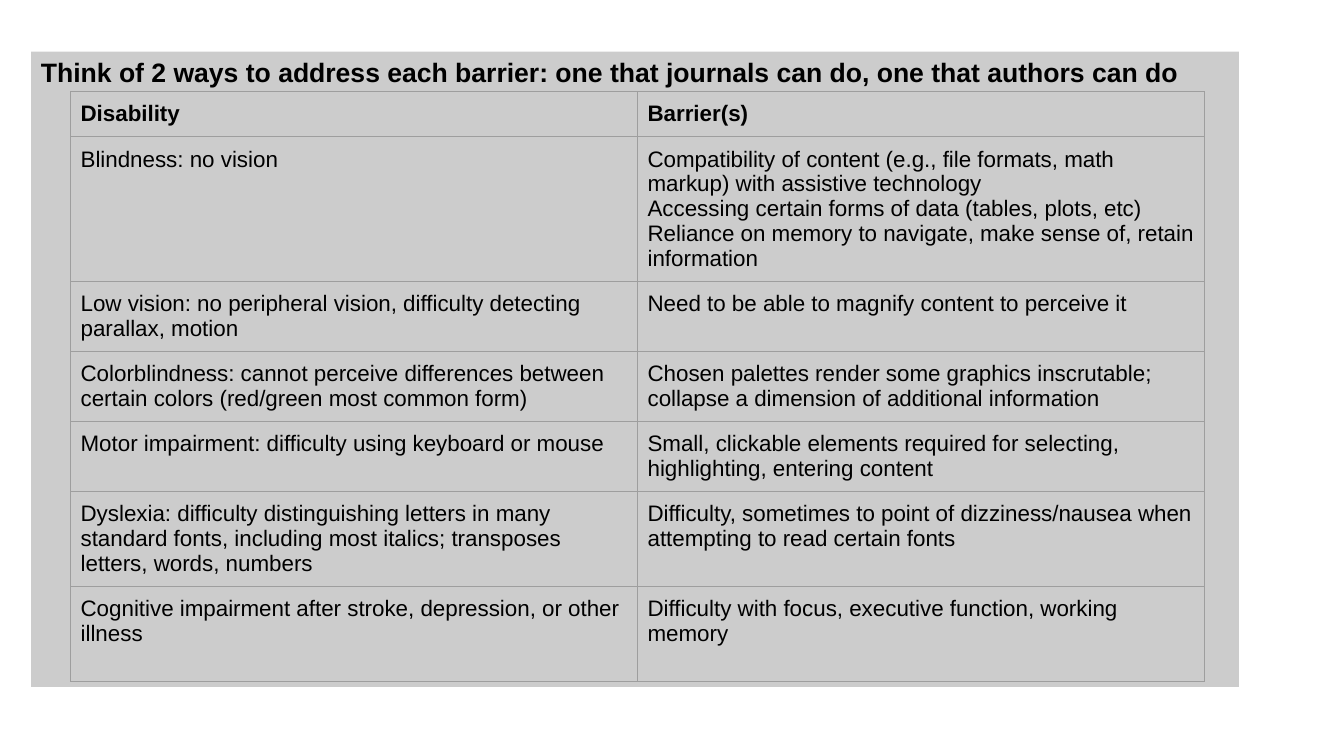
from lxml.etree import SubElement
from pptx import Presentation
from pptx.dml.color import RGBColor as RGB
from pptx.enum.shapes import MSO_SHAPE as SHAPE
from pptx.enum.text import MSO_ANCHOR as ANCHOR, PP_ALIGN as ALIGN
from pptx.oxml.ns import qn
from pptx.util import Pt

# Content: disability, barriers, lines of height in the row
TITLE = "Think of 2 ways to address each barrier: one that journals can do, one that authors can do"
ROWS = [
    ("Disability", ["Barrier(s)"], 1),
    ("Blindness: no vision",
     ["Compatibility of content (e.g., file formats, math markup) with assistive technology",
      "Accessing certain forms of data (tables, plots, etc)",
      "Reliance on memory to navigate, make sense of, retain information"], 5),
    ("Low vision: no peripheral vision, difficulty detecting parallax, motion",
     ["Need to be able to magnify content to perceive it"], 2),
    ("Colorblindness: cannot perceive differences between certain colors (red/green most common form)",
     ["Chosen palettes render some graphics inscrutable; collapse a dimension of additional information"], 2),
    ("Motor impairment: difficulty using keyboard or mouse",
     ["Small, clickable elements required for selecting, highlighting, entering content"], 2),
    ("Dyslexia: difficulty distinguishing letters in many standard fonts, including most italics; "
     "transposes letters, words, numbers",
     ["Difficulty, sometimes to point of dizziness/nausea when attempting to read certain fonts"], 3),
    ("Cognitive impairment after stroke, depression, or other illness",
     ["Difficulty with focus, executive function, working memory"], 3),
]
COLORS = {"panel": "CCCCCC", "text": "000000", "border": "9E9E9E"}
FONT = "Arial"
INSET, LINE_H, COL_W = 7.2, 17.8, 405


def add_text(p, text, size, bold):
    r = p.add_run()
    r.text = text
    r.font.name, r.font.size, r.font.bold = FONT, Pt(size), bold
    r.font.color.rgb = RGB.from_string(COLORS["text"])


def set_borders(cell):
    tcPr = cell._tc.get_or_add_tcPr()
    for i, side in enumerate(("a:lnL", "a:lnR", "a:lnT", "a:lnB")):
        ln = SubElement(tcPr, qn(side), w=str(Pt(0.75)))
        fill = SubElement(ln, qn("a:solidFill"))
        SubElement(fill, qn("a:srgbClr"), val=COLORS["border"])
        tcPr.insert(i, ln)  # borders come before the fill


prs = Presentation()
prs.slide_width, prs.slide_height = Pt(960), Pt(540)
s = prs.slides.add_slide(prs.slide_layouts[6])

# Grey panel with the title
panel = s.shapes.add_shape(SHAPE.RECTANGLE, Pt(22.2), Pt(36.8), Pt(862.8), Pt(453.8))
panel.shadow.inherit = False
panel.fill.solid()
panel.fill.fore_color.rgb = RGB.from_string(COLORS["panel"])
panel.line.fill.background()
tf = panel.text_frame
tf.word_wrap = True
tf.vertical_anchor = ANCHOR.TOP
tf.margin_left = tf.margin_right = Pt(INSET)
tf.margin_top = Pt(5.4)
p = tf.paragraphs[0]
p.alignment, p.line_spacing = ALIGN.LEFT, 0.9
add_text(p, TITLE, 19, True)

# Table of disabilities and barriers
heights = [2 * INSET + n * LINE_H for _, _, n in ROWS]
table = s.shapes.add_table(len(ROWS), 2, Pt(50.4), Pt(65.5),
                           Pt(2 * COL_W), Pt(sum(heights))).table
table.first_row = table.horz_banding = False
for col in table.columns:
    col.width = Pt(COL_W)
for i, (disability, barriers, _) in enumerate(ROWS):
    table.rows[i].height = Pt(heights[i])
    for j, lines in enumerate(([disability], barriers)):
        cell = table.cell(i, j)
        cell.fill.background()
        set_borders(cell)
        cell.margin_left = cell.margin_right = Pt(INSET)
        cell.margin_top = cell.margin_bottom = Pt(INSET)
        tf = cell.text_frame
        for k, line in enumerate(lines):
            p = tf.add_paragraph() if k else tf.paragraphs[0]
            add_text(p, line, 16, i == 0)

prs.save("out.pptx")
